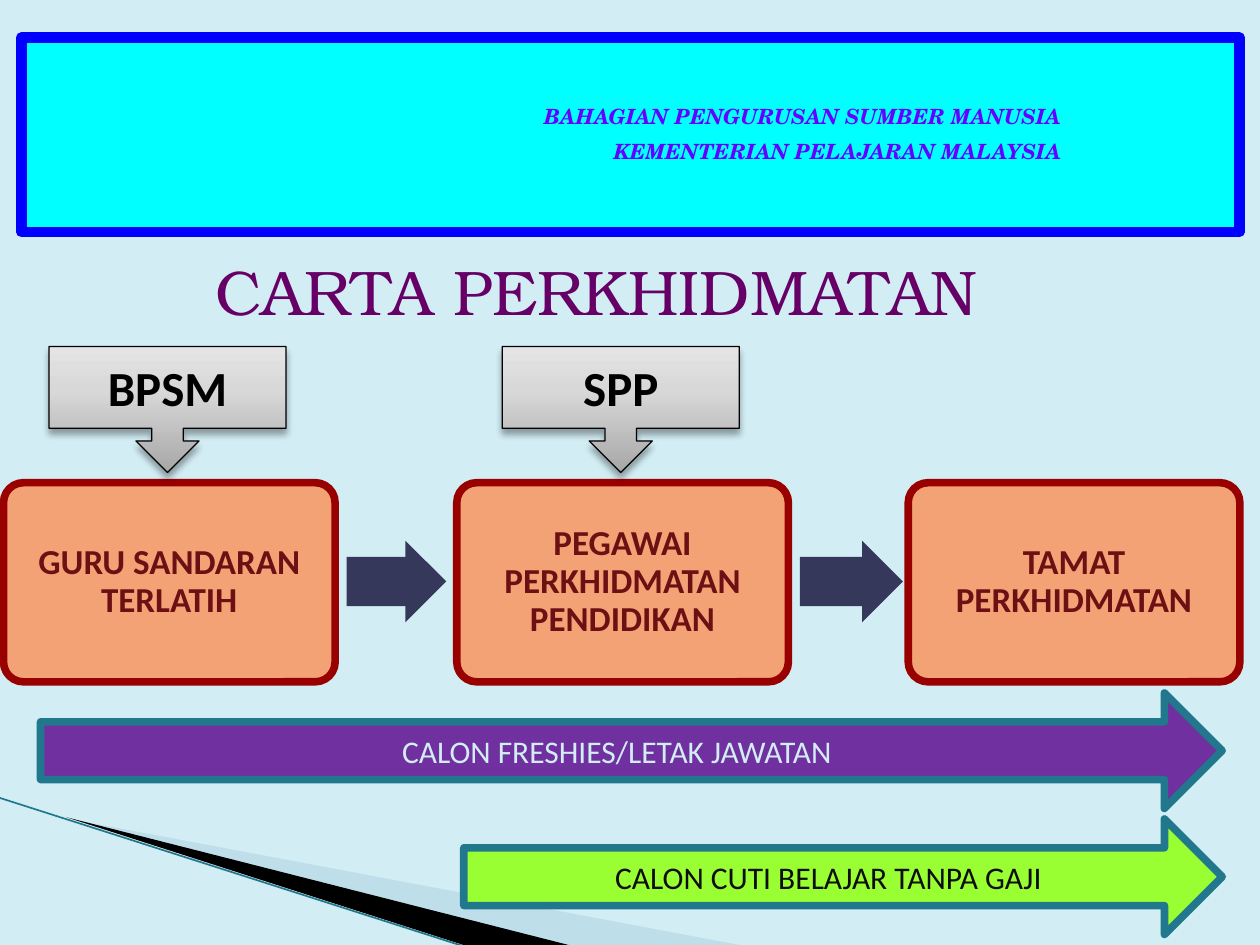
"""Build the service chart slide with its header, stages, callouts and candidate arrows."""
from dataclasses import dataclass

from pptx import Presentation
from pptx.dml.color import RGBColor
from pptx.enum import shapes, text
from pptx.oxml import parse_xml
from pptx.oxml.ns import nsdecls, qn
from pptx.util import Pt

KIND = shapes.MSO_SHAPE
ALIGN = text.PP_ALIGN
ANCHOR = text.MSO_ANCHOR


@dataclass
class Block:
    kind: int
    left: float
    top: float
    width: float
    height: float
    fill: str
    line: str = ""
    weight: float = 0
    adjust: tuple = ()


@dataclass
class Stage:
    left: float
    label: str
    callout: str = ""
    arrow_width: float = 0


@dataclass
class Candidate:
    left: float
    top: float
    label: str
    fill: str
    color: str


STAGES = [
    Stage(2, "GURU SANDARAN TERLATIH", "BPSM", 57),
    Stage(261, "PEGAWAI PERKHIDMATAN PENDIDIKAN", "SPP", 59),
    Stage(519, "TAMAT PERKHIDMATAN"),
]
CANDIDATES = [
    Candidate(23.2, 396, "CALON FRESHIES/LETAK JAWATAN", "7030A0", "D2EDF4"),
    Candidate(265, 468, "CALON CUTI BELAJAR TANPA GAJI", "99FF33", "0D0D0D"),
]
CANDIDATE_RIGHT = 698.4


def paint(target, color: str) -> None:
    target.solid()
    target.fore_color.rgb = RGBColor.from_string(color)


def write(box, lines: list, *, size: float, color: str, font: str = "Calibri",
          bold: bool = False, italic: bool = False, align=ALIGN.CENTER,
          anchor=ANCHOR.MIDDLE, spacing: float = 1, before: float = 0,
          inset: float | None = None, wrap: bool = True) -> None:
    frame = box.text_frame
    frame.word_wrap = wrap
    frame.vertical_anchor = anchor
    frame.auto_size = text.MSO_AUTO_SIZE.NONE
    if inset is not None:
        frame.margin_left = frame.margin_right = Pt(inset)
        frame.margin_top = frame.margin_bottom = Pt(inset)
    for index, line in enumerate(lines):
        para = frame.paragraphs[0] if index == 0 else frame.add_paragraph()
        para.alignment = align
        para.line_spacing = spacing
        para.space_before = Pt(before if index else 0)
        span = para.add_run()
        span.text = line
        span.font.name = font
        span.font.size = Pt(size)
        span.font.bold = bold
        span.font.italic = italic
        span.font.color.rgb = RGBColor.from_string(color)


def add_block(page, block: Block):
    shape = page.shapes.add_shape(block.kind, Pt(block.left), Pt(block.top),
                                  Pt(block.width), Pt(block.height))
    shape.shadow.inherit = False
    for index, value in enumerate(block.adjust):
        shape.adjustments[index] = value
    paint(shape.fill, block.fill)
    if block.line:
        paint(shape.line.fill, block.line)
        shape.line.width = Pt(block.weight)
    else:
        shape.line.fill.background()
    return shape


def add_wedge(page, points: list, color: str, opacity: int = 100) -> None:
    builder = page.shapes.build_freeform(*points[0], scale=Pt(1))
    builder.add_line_segments(points[1:], close=True)
    shape = builder.convert_to_shape()
    shape.shadow.inherit = False
    paint(shape.fill, color)
    shape.line.fill.background()
    tint = shape._element.spPr.find(qn("a:solidFill"))[0]
    tint.append(parse_xml(f'<a:alpha {nsdecls("a")} val="{opacity * 1000}"/>'))


def add_edge(page) -> None:
    edge = page.shapes.add_connector(shapes.MSO_CONNECTOR.STRAIGHT,
                                     Pt(0), Pt(456), Pt(267), Pt(541.4))
    paint(edge.line.fill, "21788D")
    edge.line.width = Pt(0.95)
    edge._element.spPr.append(parse_xml(f'<a:effectLst {nsdecls("a")}/>'))


def add_callout(page, left: float, label: str) -> None:
    shape = add_block(page, Block(KIND.DOWN_ARROW_CALLOUT, left, 198, 135.4, 72,
                                  "D8D8D8", "000000", 0.75))
    stops = "".join(
        f'<a:gs pos="{place * 1000}"><a:srgbClr val="{color}"/></a:gs>'
        for place, color in [(0, "A7A7A7"), (65, "D8D8D8"), (100, "E4E4E4")])
    properties = shape._element.spPr
    properties.replace(properties.find(qn("a:solidFill")), parse_xml(
        f'<a:gradFill {nsdecls("a")} rotWithShape="1"><a:gsLst>{stops}</a:gsLst>'
        '<a:lin ang="16200000" scaled="0"/></a:gradFill>'))
    properties.find(qn("a:effectLst")).append(parse_xml(
        f'<a:outerShdw {nsdecls("a")} blurRad="{Pt(4)}" dist="{Pt(3)}" dir="5400000" '
        'rotWithShape="0"><a:srgbClr val="000000"><a:alpha val="35000"/></a:srgbClr>'
        '</a:outerShdw>'))
    write(shape, [label], size=28, color="000000", bold=True)


def add_stage(page, stage: Stage) -> None:
    width = 189.5
    shape = add_block(page, Block(KIND.ROUNDED_RECTANGLE, stage.left, 275.8, width, 113.8,
                                  "F3A276", "990000", 4.33, (0.1,)))
    write(shape, [stage.label], size=20, color="6D1014", bold=True, spacing=0.9, inset=2.5)
    if stage.arrow_width:
        add_block(page, Block(KIND.RIGHT_ARROW, stage.left + width + 6.5, 308.9,
                              stage.arrow_width, 46.8, "35385A", adjust=(0.6, 0.5)))
    if stage.callout:
        add_callout(page, stage.left + 26, stage.callout)


def add_candidate(page, candidate: Candidate) -> None:
    shape = add_block(page, Block(KIND.RIGHT_ARROW, candidate.left, candidate.top,
                                  CANDIDATE_RIGHT - candidate.left, 66,
                                  candidate.fill, "21788D", 4.33))
    write(shape, [candidate.label], size=18, color=candidate.color)


def add_header(page) -> None:
    add_block(page, Block(KIND.RECTANGLE, 12.2, 21.6, 696.2, 110.9, "00FFFF", "0000FF", 6))
    box = page.shapes.add_textbox(Pt(254.2), Pt(55.4), Pt(362.9), Pt(44.6))
    write(box, ["BAHAGIAN PENGURUSAN SUMBER MANUSIA ", "KEMENTERIAN PELAJARAN MALAYSIA "],
          size=12, color="6600FF", font="TeX Gyre Schola", bold=True, italic=True,
          align=ALIGN.RIGHT, anchor=ANCHOR.TOP, before=6)


def place_title(page) -> None:
    title = page.shapes.title
    title.left, title.top, title.width, title.height = Pt(116), Pt(140.4), Pt(486), Pt(51)
    write(title, ["CARTA PERKHIDMATAN"], size=36, color="660066", font="TeX Gyre Bonum",
          align=ALIGN.LEFT, anchor=ANCHOR.TOP, wrap=False)


def main() -> None:
    deck = Presentation()
    deck.slide_width, deck.slide_height = Pt(720), Pt(540)
    page = deck.slides.add_slide(deck.slide_layouts[5])
    paint(page.background.fill, "D2EDF4")
    place_title(page)
    add_wedge(page, [(39.6, 468), (428.4, 540.7), (328.3, 540.7)], "A0CBDC", 40)
    add_wedge(page, [(38.2, 467.3), (329, 540.7), (267.8, 541.4)], "000000")
    add_edge(page)
    add_header(page)
    for stage in STAGES:
        add_stage(page, stage)
    for candidate in CANDIDATES:
        add_candidate(page, candidate)
    deck.save("out.pptx")


if __name__ == "__main__":
    main()
